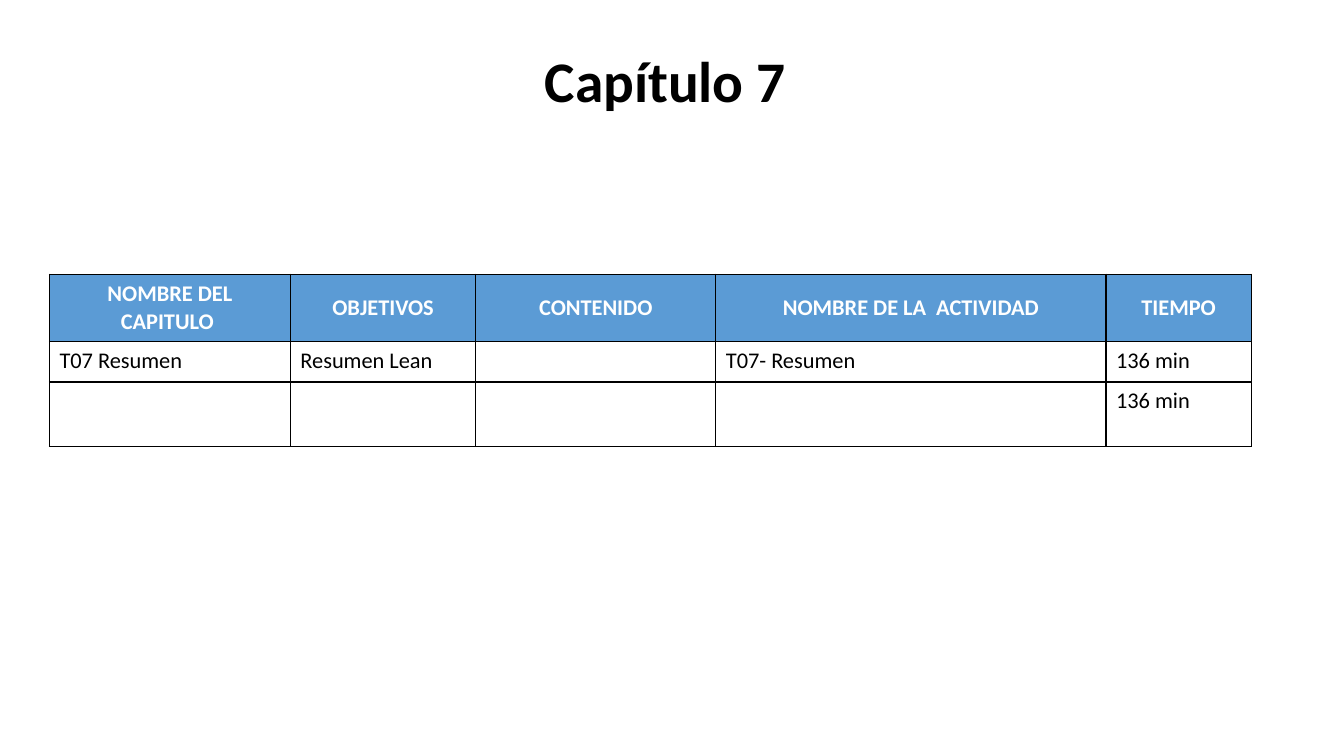
import pptx
import pptx.dml.color
import pptx.enum.text
import pptx.oxml
import pptx.oxml.ns
import pptx.util

Inches = pptx.util.Inches
Pt = pptx.util.Pt
Align = pptx.enum.text.PP_ALIGN
Anchor = pptx.enum.text.MSO_ANCHOR

COLORS = {"ink": "000000", "paper": "FFFFFF", "head": "5B9BD5"}
WIDTHS = [2.39, 1.84, 2.38, 3.87, 1.44]
HEIGHTS = [0.67, 0.4, 0.64]
ROWS = [
    ["NOMBRE DEL CAPITULO ", "OBJETIVOS", "CONTENIDO", "NOMBRE DE LA  ACTIVIDAD", "TIEMPO"],
    ["T07 Resumen", "Resumen Lean", "", "T07- Resumen", "136 min"],
    ["", "", "", "", "136 min"],
]


class Deck:
    font = "Calibri"

    def __init__(self, show):
        self.slide = show.slides.add_slide(show.slide_layouts[5])

    def color(self, name):
        return pptx.dml.color.RGBColor.from_string(COLORS[name])

    def style(self, para, size, color, bold, align):
        para.alignment = align
        for item in [para, *para.runs]:
            item.font.name = self.font
            item.font.size = Pt(size)
            item.font.bold = bold
            item.font.color.rgb = self.color(color)

    def title(self, text, left, top, width, height):
        shape = self.slide.shapes.title
        shape.left, shape.top = Inches(left), Inches(top)
        shape.width, shape.height = Inches(width), Inches(height)
        frame = shape.text_frame
        frame.text = text
        frame.vertical_anchor = Anchor.TOP
        frame.paragraphs[0].line_spacing = 0.9
        self.style(frame.paragraphs[0], 41, "ink", True, Align.CENTER)

    def border(self, cell):
        props = cell._tc.get_or_add_tcPr()
        space = pptx.oxml.ns.nsdecls("a")
        for side in "LRTB":
            props.append(pptx.oxml.parse_xml(
                f'<a:ln{side} {space} w="{Pt(1)}"><a:solidFill>'
                f'<a:srgbClr val="{COLORS["ink"]}"/></a:solidFill></a:ln{side}>'))

    def cell(self, cell, text, head):
        self.border(cell)
        cell.fill.solid()
        cell.fill.fore_color.rgb = self.color("head" if head else "paper")
        cell.vertical_anchor = Anchor.MIDDLE if head else Anchor.TOP
        cell.text_frame.text = text
        self.style(cell.text_frame.paragraphs[0], 16, "paper" if head else "ink",
                   head, Align.CENTER if head else Align.LEFT)

    def table(self, rows, left, top, widths, heights):
        grid = self.slide.shapes.add_table(
            len(rows), len(widths), Inches(left), Inches(top),
            Inches(sum(widths)), Inches(sum(heights))).table
        grid.horz_banding = False
        for col, width in zip(grid.columns, widths):
            col.width = Inches(width)
        for row, height in zip(grid.rows, heights):
            row.height = Inches(height)
        for r, row in enumerate(rows):
            for c, text in enumerate(row):
                self.cell(grid.cell(r, c), text, r == 0)


def main():
    show = pptx.Presentation()
    show.slide_width, show.slide_height = Inches(13.33), Inches(7.5)
    deck = Deck(show)
    deck.title("Capítulo 7 ", 0, 0.48, 13.33, 1.31)
    deck.table(ROWS, 0.49, 2.72, WIDTHS, HEIGHTS)
    show.save("out.pptx")


if __name__ == "__main__":
    main()
